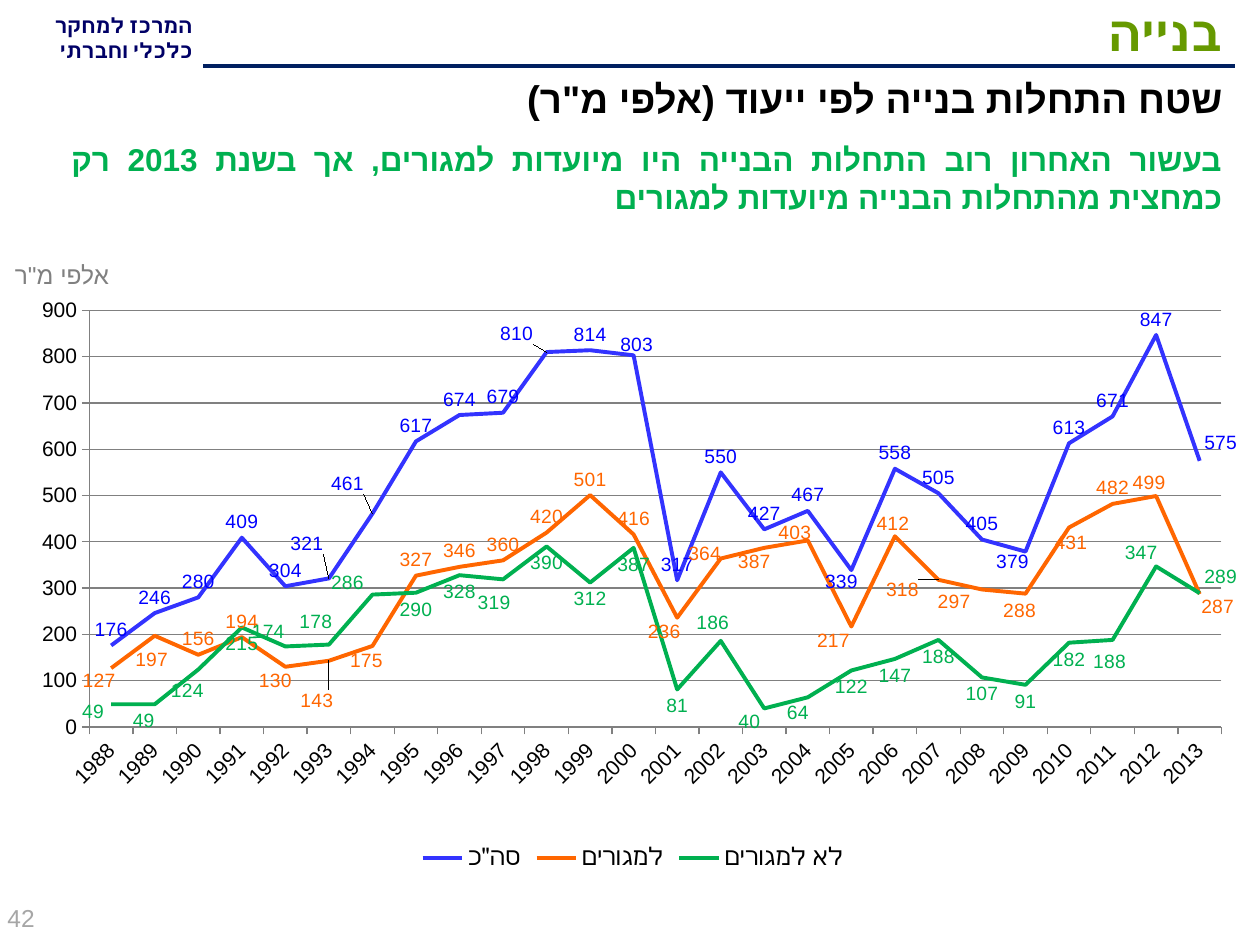
from lxml import etree
from pptx import Presentation
from pptx.chart.data import CategoryChartData
from pptx.dml.color import RGBColor
from pptx.enum.chart import XL_CHART_TYPE as ChartType, XL_LABEL_POSITION as LabelPos
from pptx.enum.chart import XL_LEGEND_POSITION as LegendPos, XL_MARKER_STYLE as Marker
from pptx.enum.chart import XL_TICK_MARK as Tick
from pptx.enum.shapes import MSO_CONNECTOR as Connector
from pptx.enum.text import MSO_ANCHOR as Anchor, PP_ALIGN as Align
from pptx.oxml import parse_xml
from pptx.oxml.ns import nsdecls, qn
from pptx.util import Emu, Pt

EMU_PER_PX = 914400 / 126
SLIDE_SIZE = (1260, 945)
CHART_BOX = (25, 290, 1216, 586)

THEME = {
    "center": {"size": 12, "name": "Calibri", "color": "000066", "bold": True},
    "title": {"size": 28, "name": "Calibri", "color": "669900", "bold": True},
    "subtitle": {"size": 22, "name": "Arial", "color": "000000", "bold": True},
    "message": {"size": 18, "name": "Arial", "color": "00B050", "bold": True},
    "unit": {"size": 14, "name": "Arial", "color": "808080"},
    "page": {"size": 14, "name": "Arial", "color": "A6A6A6"},
    "chart": {"size": 14, "name": "Arial", "color": "000000"},
    "axis": {"size": 12, "name": "Arial", "color": "000000"},
    "label": {"size": 11, "name": "Arial"},
    "rule": "002060",
    "grid": "808080",
    "line_width": 2.25,
}

YEARS = [str(year) for year in range(1988, 2014)]
SERIES = [
    {
        "name": 'סה"כ', "line": "3333FF", "label": "0000FF", "position": LabelPos.ABOVE,
        "values": [176, 246, 280, 409, 304, 321, 461, 617, 674, 679, 810, 814, 803,
                   317, 550, 427, 467, 339, 558, 505, 405, 379, 613, 671, 847, 575],
        "shifts": {5: (-22, -19), 6: (-25, -14), 10: (-30, -3), 12: (3, 5),
                   17: (-10, 27), 21: (-13, 26), 25: (21, -2)},
    },
    {
        "name": "למגורים", "line": "FF6600", "label": "FF6600", "position": LabelPos.ABOVE,
        "values": [127, 197, 156, 194, 130, 143, 175, 327, 346, 360, 420, 501, 416,
                   236, 364, 387, 403, 217, 412, 318, 297, 288, 431, 482, 499, 287],
        "shifts": {0: (-12, 28), 1: (-3, 40), 4: (-10, 30), 5: (-12, 56), 6: (-6, 30),
                   13: (-13, 30), 14: (-16, 11), 15: (-10, 30), 16: (-13, 8),
                   17: (-18, 30), 18: (-2, 3), 19: (-36, 26), 20: (-28, 28),
                   21: (-6, 33), 22: (2, 31), 24: (-7, 2), 25: (18, 28)},
    },
    {
        "name": "לא למגורים", "line": "00B050", "label": "00B050", "position": LabelPos.BELOW,
        "values": [49, 49, 124, 215, 174, 178, 286, 290, 328, 319, 390, 312, 387,
                   81, 186, 40, 64, 122, 147, 188, 107, 91, 182, 188, 347, 289],
        "shifts": {0: (-18, -9), 1: (-11, 0), 2: (-11, 5), 4: (-17, -31), 5: (-13, -39),
                   6: (-25, -28), 9: (-9, 7), 14: (-8, -35), 15: (-15, -3),
                   16: (-10, -1), 23: (-3, 5), 24: (-15, -30), 25: (21, -33)},
    },
]


def px(length):
    """Turn pixels into EMU."""
    return Emu(round(length * EMU_PER_PX))


def set_all(target, formats):
    """Set every attribute named in a dict of format values."""
    for attribute, value in formats.items():
        setattr(target, attribute, value)


def style_font(font, style):
    """Apply one theme style to a font."""
    formats = dict(style)
    color = formats.pop("color")
    formats["size"] = Pt(formats["size"])
    set_all(font, formats)
    font.color.rgb = RGBColor.from_string(color)


def style_line(line, color, width):
    """Give a line its colour and its width in points."""
    line.color.rgb = RGBColor.from_string(color)
    line.width = Pt(width)


def add_text(slide, box, lines, style, align=None, rtl=True, anchor=Anchor.TOP):
    """Add a text box with one paragraph for each line."""
    frame = slide.shapes.add_textbox(*map(px, box)).text_frame
    set_all(frame, {"word_wrap": True, "vertical_anchor": anchor})
    frame.text = "\n".join(lines)
    for paragraph in frame.paragraphs:
        paragraph.alignment = align
        if rtl:
            paragraph._p.get_or_add_pPr().set("rtl", "1")
        for run in paragraph.runs:
            style_font(run.font, style)
            complex_font = etree.SubElement(run._r.get_or_add_rPr(), qn("a:cs"))
            complex_font.set("typeface", style["name"])


def add_rule(slide, start, end):
    """Add the straight header rule."""
    rule = slide.shapes.add_connector(Connector.STRAIGHT, *map(px, start + end))
    style_line(rule.line, THEME["rule"], THEME["line_width"])
    etree.SubElement(rule._element.spPr, qn("a:effectLst"))


def manual_layout(**values):
    """Build a chart layout element from named values."""
    parts = "".join(f'<c:{key} val="{value}"/>' for key, value in values.items())
    return parse_xml(
        f'<c:layout {nsdecls("c")}><c:manualLayout>{parts}</c:manualLayout></c:layout>'
    )


def style_series(series, content):
    """Draw one line with its value labels, some of them shifted."""
    series.smooth = False
    series.marker.style = Marker.NONE
    style_line(series.format.line, content["line"], THEME["line_width"])
    label_style = THEME["label"] | {"color": content["label"]}
    labels = series.data_labels
    set_all(labels, {"show_value": True, "position": content["position"],
                     "number_format": "#,##0", "number_format_is_linked": False})
    style_font(labels.font, label_style)
    for index, (right, down) in content["shifts"].items():
        label = series.points[index].data_label
        style_font(label.font, label_style)
        label.position = content["position"]
        shift = manual_layout(x=round(right / CHART_BOX[2], 4), y=round(down / CHART_BOX[3], 4))
        label._dLbl.find(qn("c:idx")).addnext(shift)


def style_axes(chart):
    """Format the year axis, the value axis and the gridlines."""
    years, amounts = chart.category_axis, chart.value_axis
    set_all(amounts, {"minimum_scale": 0, "maximum_scale": 900, "major_unit": 100,
                      "has_major_gridlines": True})
    for axis in (years, amounts):
        set_all(axis, {"major_tick_mark": Tick.OUTSIDE, "minor_tick_mark": Tick.NONE})
        style_font(axis.tick_labels.font, THEME["axis"])
        style_line(axis.format.line, THEME["grid"], 0.75)
    style_line(amounts.major_gridlines.format.line, THEME["grid"], 0.75)
    years._element.find(qn("c:txPr")).find(qn("a:bodyPr")).set("rot", "-2700000")


def add_line_chart(slide):
    """Add the line chart of building starts."""
    data = CategoryChartData(number_format="#,##0")
    data.categories = YEARS
    for content in SERIES:
        data.add_series(content["name"], content["values"])
    chart = slide.shapes.add_chart(ChartType.LINE, *map(px, CHART_BOX), data).chart
    set_all(chart, {"has_title": False, "has_legend": True})
    style_font(chart.font, THEME["chart"])
    set_all(chart.legend, {"position": LegendPos.BOTTOM, "include_in_layout": False})
    style_font(chart.legend.font, THEME["chart"])
    chart.legend._element.find(qn("c:legendPos")).addnext(
        manual_layout(xMode="edge", yMode="edge", x=0.33, y=0.9))
    chart.plots[0].vary_by_categories = False
    plot_area = chart._chartSpace.chart.plotArea
    for automatic in plot_area.findall(qn("c:layout")):
        plot_area.remove(automatic)
    plot_area.insert(0, manual_layout(layoutTarget="inner", xMode="edge", yMode="edge",
                                      x=0.053, y=0.035, w=0.931, h=0.711))
    style_axes(chart)
    for series, content in zip(chart.plots[0].series, SERIES):
        style_series(series, content)


def main():
    """Build the slide and save it."""
    deck = Presentation()
    deck.slide_width, deck.slide_height = map(px, SLIDE_SIZE)
    slide = deck.slides.add_slide(deck.slide_layouts[6])
    add_text(slide, (-19, 6, 224, 64), ["המרכז למחקר", "כלכלי וחברתי"],
             THEME["center"], Align.RIGHT)
    add_rule(slide, (1235, 66), (203, 66))
    add_text(slide, (199, -4, 1036, 69), ["בנייה"], THEME["title"], Align.RIGHT)
    add_line_chart(slide)
    add_text(slide, (11, 69, 1224, 76), ['שטח התחלות בנייה לפי ייעוד (אלפי מ"ר)'],
             THEME["subtitle"], Align.RIGHT)
    add_text(slide, (-35, 254, 194, 43), ['אלפי מ"ר'], THEME["unit"], Align.CENTER, rtl=False)
    add_text(slide, (-5, 890, 294, 55), ["42"], THEME["page"], anchor=Anchor.MIDDLE)
    add_text(slide, (59, 134, 1176, 130),
             ["בעשור האחרון רוב התחלות הבנייה היו מיועדות למגורים, אך בשנת 2013 רק "
              "כמחצית מהתחלות הבנייה מיועדות למגורים"], THEME["message"], Align.JUSTIFY)
    deck.save("out.pptx")


if __name__ == "__main__":
    main()
